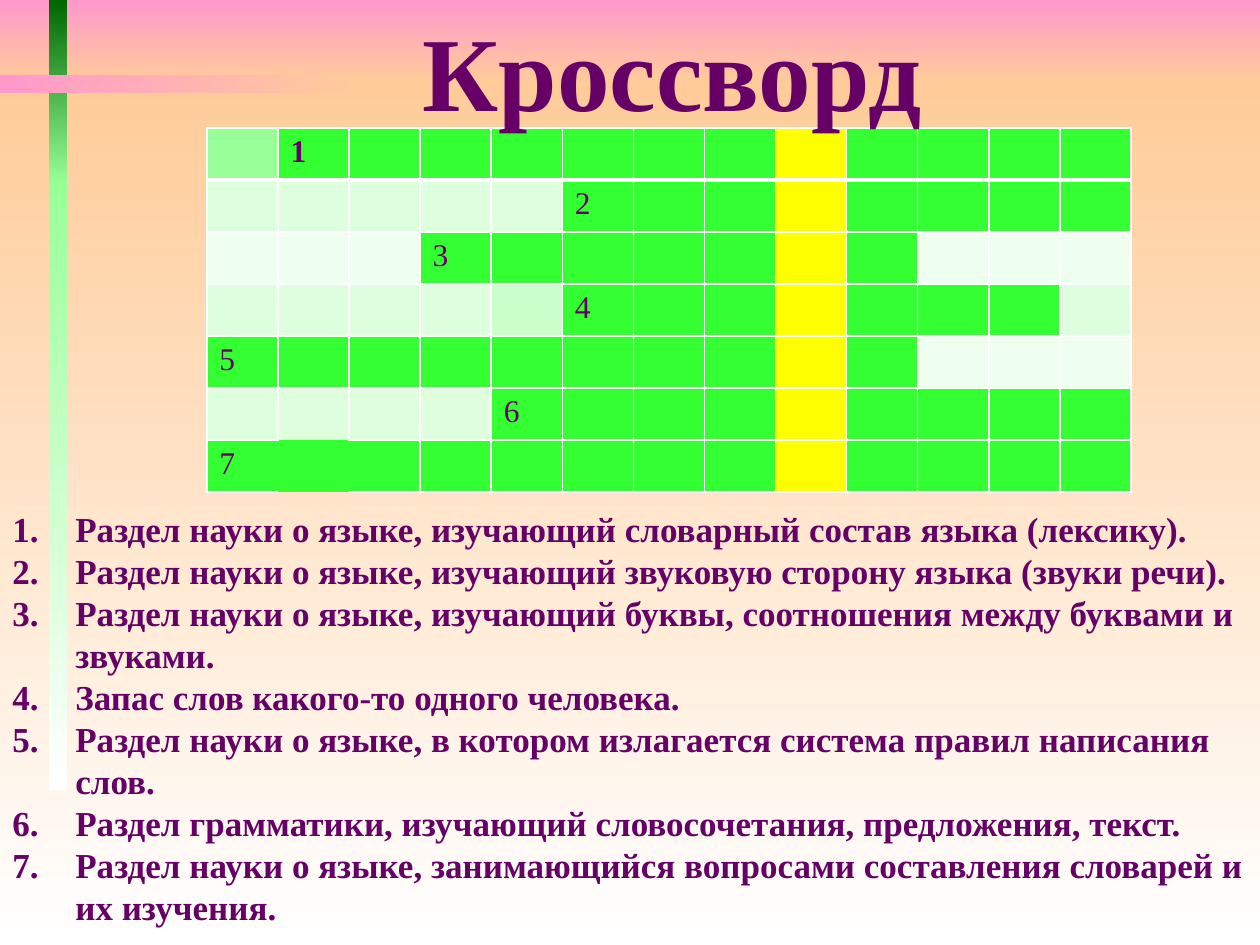
"""Build a crossword slide: backdrop, title, letter grid and clues."""
from dataclasses import dataclass, field

from pptx import Presentation
from pptx import util as u
from pptx.dml.color import RGBColor
from pptx.enum import shapes
from pptx.oxml import parse_xml
from pptx.oxml.ns import nsdecls


@dataclass(frozen=True)
class Theme:
    """Colours, font and type sizes of the slide."""
    ink: str = "660066"
    pink: str = "FF99CC"
    peach: str = "FFCC99"
    white: str = "FFFFFF"
    dark: str = "006600"
    light: str = "99FF99"
    font: str = "Times New Roman"
    title: int = 60
    clue: int = 20
    cell: int = 18
    thin: int = 1
    thick: int = 3
    cells: dict = field(default_factory=lambda: {
        "g": "33FF33", "y": "FFFF00", "l": "99FF99",
        "m": "DEFFDE", "p": "EFFFEF", "s": "CAFFCA"})


T = Theme()
GRID = [
    "lgggggggygggg",
    "mmmmmgggygggg",
    "pppgggggygppp",
    "mmmmsgggygggm",
    "ggggggggygppp",
    "mmmmggggygggg",
    "ggggggggygggg",
]
OPEN = (6, 1)
CLUES = [
    "Раздел науки о языке, изучающий словарный состав языка (лексику).",
    "Раздел науки о языке, изучающий звуковую сторону языка (звуки речи).",
    "Раздел науки о языке, изучающий буквы, соотношения между буквами и звуками.",
    "Запас слов какого-то одного человека.",
    "Раздел науки о языке, в котором излагается система правил написания слов.",
    "Раздел грамматики, изучающий словосочетания, предложения, текст.",
    "Раздел науки о языке, занимающийся вопросами составления словарей и их изучения.",
]


def style(para, size, bold=True):
    """Set the font of a paragraph."""
    font = para.font
    font.name, font.size, font.bold = T.font, u.Pt(size), bold
    font.color.rgb = RGBColor.from_string(T.ink)


def indent(para, left, first=0):
    """Set the left and first-line indents, in cm, and return the properties."""
    props = para._p.get_or_add_pPr()
    props.set("marL", str(u.Cm(left)))
    props.set("indent", str(u.Cm(first)))
    return props


def band(slide, box, start, end, angle=270):
    """Draw a rectangle with a two-colour gradient."""
    shape = slide.shapes.add_shape(shapes.MSO_SHAPE.RECTANGLE, *map(u.Cm, box))
    shape.shadow.inherit = False
    shape.line.fill.background()
    shape.fill.gradient()
    shape.fill.gradient_angle = angle
    for stop, tone, pos in zip(shape.fill.gradient_stops, (start, end), (0, 1)):
        stop.color.rgb = RGBColor.from_string(tone)
        stop.position = pos


def backdrop(slide, box):
    """Fill the box with the sky and the crossed bars."""
    x, y, w, h = box
    sky, bar, mid = 1.7, 0.36, 3.72
    band(slide, (x, y, w, sky), T.pink, T.peach)
    band(slide, (x, y + sky, w, h - sky), T.peach, T.white)
    band(slide, (x + 0.99, y, bar, mid), T.dark, T.light)
    band(slide, (x + 0.99, y + mid, bar, 12.21), T.light, T.white)
    band(slide, (x, y + 1.52, 7.34, bar), T.pink, T.peach, 0)


def edge(cell, row, col):
    """Rule the four sides of a cell, leaving the open cell bare."""
    sides = {"L": (row, col - 1), "R": (row, col + 1),
             "T": (row - 1, col), "B": (row + 1, col)}
    props = cell._tc.get_or_add_tcPr()
    for side, near in sides.items():
        bare = OPEN in ((row, col), near)
        head = (row, side) in ((0, "B"), (1, "T"))
        width = u.Pt(T.thick if head else T.thin)
        paint = "<a:noFill/>" if bare else (
            f'<a:solidFill><a:srgbClr val="{T.white}"/></a:solidFill>')
        props.append(parse_xml(
            f'<a:ln{side} {nsdecls("a")} w="{width}">{paint}</a:ln{side}>'))


def board(slide, box):
    """Lay out the crossword grid with a number at each word's start."""
    x, y, w, h = box
    rows, cols = len(GRID), len(GRID[0])
    table = slide.shapes.add_table(rows, cols, *map(u.Cm, box)).table
    table.first_row = table.horz_banding = False
    for item in table.columns:
        item.width = u.Cm(w / cols)
    for item in table.rows:
        item.height = u.Cm(h / rows)
    for row, line in enumerate(GRID):
        for col, code in enumerate(line):
            cell = table.cell(row, col)
            edge(cell, row, col)
            cell.fill.solid()
            cell.fill.fore_color.rgb = RGBColor.from_string(T.cells[code])
            if col == line.index("g"):
                cell.text = str(row + 1)
            style(cell.text_frame.paragraphs[0], T.cell, row == 0)


def title(slide, box):
    """Write the heading."""
    frame = slide.shapes.add_textbox(*map(u.Cm, box)).text_frame
    frame.word_wrap = True
    para = frame.paragraphs[0]
    para.text = "Кроссворд"
    indent(para, 2.12)
    style(para, T.title)


def clues(slide, box):
    """Write the numbered list of clues."""
    frame = slide.shapes.add_textbox(*map(u.Cm, box)).text_frame
    frame.word_wrap = True
    frame.text = "\n".join(CLUES)
    for para in frame.paragraphs:
        props = indent(para, 1.27, -1.27)
        props.append(parse_xml(
            f'<a:buAutoNum {nsdecls("a")} type="arabicPeriod"/>'))
        style(para, T.clue)


def main():
    """Build and save the slide."""
    deck = Presentation()
    deck.slide_width, deck.slide_height = u.Cm(25.4), u.Cm(19.05)
    slide = deck.slides.add_slide(deck.slide_layouts[6])
    backdrop(slide, (0, 0, 25.4, 19.05))
    board(slide, (4.17, 2.58, 18.64, 7.34))
    title(slide, (6.15, 0, 12.9, 2.82))
    clues(slide, (0, 10.11, 25.4, 8.9))
    deck.save("out.pptx")


if __name__ == "__main__":
    main()
